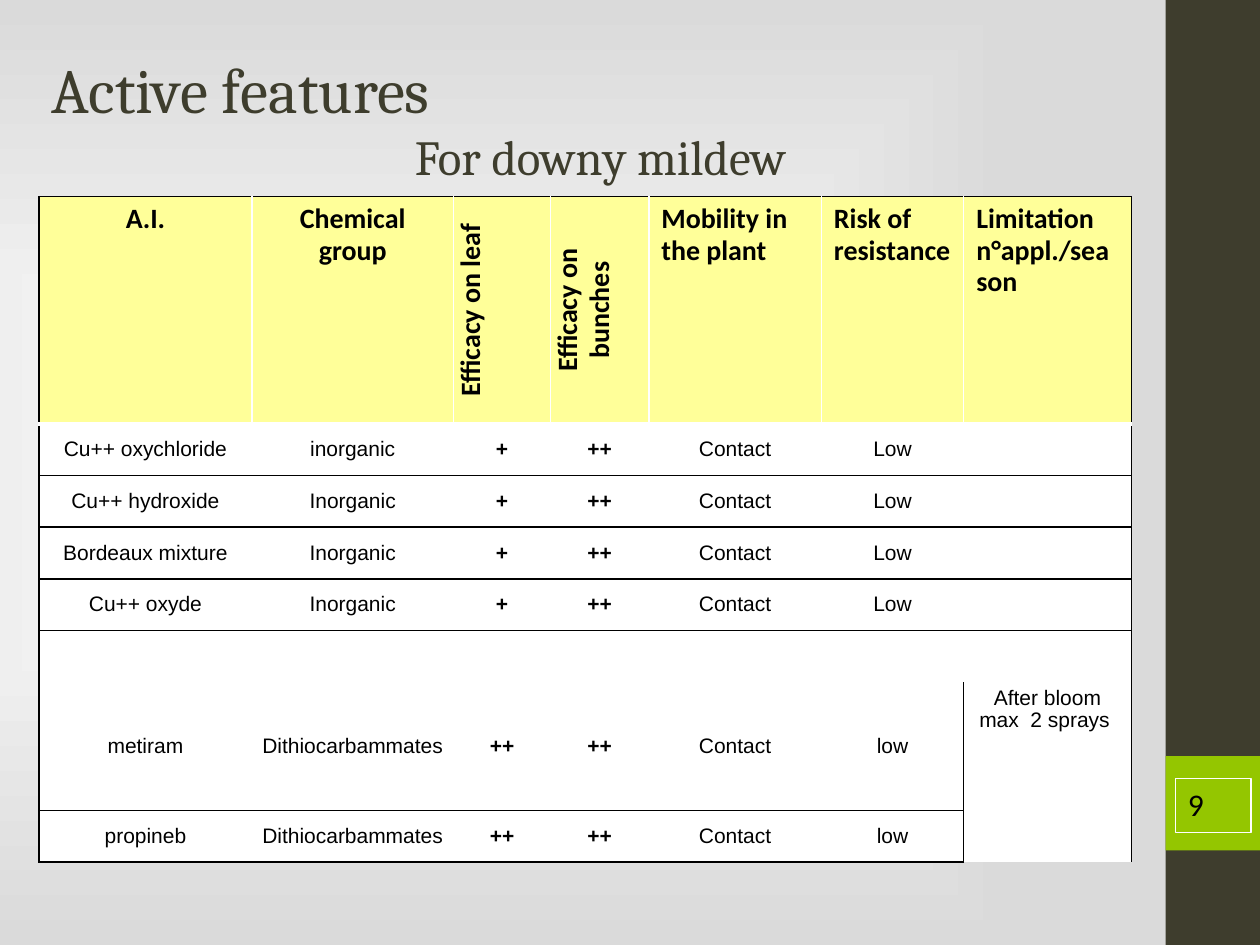
from dataclasses import dataclass
from typing import Optional

from lxml.etree import SubElement
from pptx import Presentation
from pptx.dml.color import RGBColor
from pptx.enum.shapes import MSO_SHAPE as SHAPE
from pptx.enum.text import MSO_ANCHOR as ANCHOR, PP_ALIGN as ALIGN
from pptx.oxml import parse_xml
from pptx.oxml.ns import nsdecls, qn
from pptx.util import Inches, Pt

SLIDE_W, SLIDE_H = Inches(10), Inches(7.5)
BLACK = RGBColor(0x00, 0x00, 0x00)
WHITE = RGBColor(0xFF, 0xFF, 0xFF)
GREY = RGBColor(0xDA, 0xDA, 0xDA)
OLIVE = RGBColor(0x3E, 0x3D, 0x2D)
GREEN = RGBColor(0x94, 0xC6, 0x00)
YELLOW = RGBColor(0xFF, 0xFF, 0x99)


@dataclass(frozen=True)
class Box:
    """Position and size in percent of the slide."""
    x: float
    y: float
    w: float
    h: float

    def emu(self) -> tuple:
        return (int(SLIDE_W * self.x / 100), int(SLIDE_H * self.y / 100),
                int(SLIDE_W * self.w / 100), int(SLIDE_H * self.h / 100))


@dataclass(frozen=True)
class Line:
    color: RGBColor
    width: float = 1


@dataclass(frozen=True)
class Column:
    header: str
    width: float
    align: ALIGN = ALIGN.CENTER
    upright: bool = False
    bold: bool = False


RAIL = Box(92.5, 0, 7.5, 100)
TAB = Box(92.5, 80, 7.5, 10)
NUMBER = Box(93.3, 82.4, 6, 5.73)
TITLE = Box(3.1, 4.13, 89.1, 16.67)
TABLE = Box(3.1, 20.8, 86.7, 61.6)

COLUMNS = [
    Column("A.I.", 1.69),
    Column("Chemical group", 1.6),
    Column("Efficacy on leaf", 0.77, upright=True, bold=True),
    Column("Efficacy on bunches", 0.78, upright=True, bold=True),
    Column("Mobility in the plant", 1.37, ALIGN.LEFT),
    Column("Risk of resistance", 1.13, ALIGN.LEFT),
    Column("Limitation n°appl./season", 1.33, ALIGN.LEFT),
]
ROWS = [
    ["Cu++ oxychloride", "inorganic", "+", "++", "Contact", "Low", ""],
    ["Cu++ hydroxide", "Inorganic", "+", "++", "Contact", "Low", ""],
    ["Bordeaux mixture", "Inorganic", "+", "++", "Contact", "Low", ""],
    ["Cu++ oxyde", "Inorganic", "+", "++", "Contact", "Low", ""],
    [""] * 7,
    ["metiram", "Dithiocarbammates", "++", "++", "Contact", "low",
     "After bloom max  2 sprays "],
    ["propineb", "Dithiocarbammates", "++", "++", "Contact", "low", ""],
]
HEIGHTS = [1.17, 0.41, 0.41, 0.41, 0.41, 0.41, 1.02, 0.41]
LAST_ROW, LAST_COL = len(ROWS), len(COLUMNS) - 1
BLANK_ROW, NOTE_ROW = 5, 6

HEADER_FONT = {"name": "Calibri", "size": Pt(16), "bold": True}
BODY_FONT = {"name": "Arial", "size": Pt(12), "bold": False}
TIGHT = {"margin_left": Inches(0.01), "margin_right": Inches(0.01),
         "margin_top": Inches(0.01), "margin_bottom": 0,
         "vertical_anchor": ANCHOR.MIDDLE}


def apply(target, values: dict) -> None:
    for name, value in values.items():
        setattr(target, name, value)


def add_text(p, text: str, color: RGBColor, font: dict) -> None:
    r = p.add_run()
    r.text = text
    apply(r.font, font)
    r.font.color.rgb = color


def add_box(slide, box: Box, fill: Optional[RGBColor] = None):
    sp = slide.shapes.add_shape(SHAPE.RECTANGLE, *box.emu())
    sp.shadow.inherit = False
    sp.line.fill.background()
    if fill is None:
        sp.fill.background()
    else:
        sp.fill.solid()
        sp.fill.fore_color.rgb = fill
    return sp


def paint_background(slide) -> None:
    """White to grey, spreading in rectangles from the left centre."""
    stops = "".join(f'<a:gs pos="{pos}"><a:srgbClr val="{color}"/></a:gs>'
                    for pos, color in ((0, WHITE), (100000, GREY)))
    slide.background.fill.solid()
    bg_pr = slide.background._cSld.bg.bgPr
    bg_pr.replace(bg_pr[0], parse_xml(
        f'<a:gradFill {nsdecls("a")} rotWithShape="1"><a:gsLst>{stops}</a:gsLst>'
        '<a:path path="shape"><a:fillToRect l="30000" t="50000" r="70000" '
        'b="50000"/></a:path></a:gradFill>'))


def add_title(slide) -> None:
    tf = slide.shapes.add_textbox(*TITLE.emu()).text_frame
    tf.word_wrap = True
    tf.vertical_anchor = ANCHOR.MIDDLE
    add_text(tf.paragraphs[0], "Active features", OLIVE,
             {"name": "Cambria", "size": Pt(36)})
    p = tf.add_paragraph()
    p.alignment = ALIGN.CENTER
    add_text(p, "For downy mildew", OLIVE, {"name": "Cambria", "size": Pt(28)})


def vertical_rule(row: int, edge: int) -> Line:
    """Line at a column edge: black outside and beside the spray note."""
    beside_note = edge == LAST_COL and row >= NOTE_ROW
    return Line(BLACK if edge in (0, LAST_COL + 1) or beside_note else WHITE)


def horizontal_rule(edge: int) -> Optional[Line]:
    """Line at a row edge: thick white below the header, none below the gap."""
    if edge == NOTE_ROW:
        return None
    return Line(WHITE, 3) if edge == 1 else Line(BLACK)


def set_borders(cell, row: int, col: int) -> None:
    in_note = col == LAST_COL and row >= NOTE_ROW
    lines = {
        "a:lnL": vertical_rule(row, col),
        "a:lnR": vertical_rule(row, col + 1),
        "a:lnT": None if in_note else horizontal_rule(row),
        "a:lnB": (None if in_note and row != LAST_ROW
                  else horizontal_rule(row + 1)),
    }
    tc_pr = cell._tc.get_or_add_tcPr()
    for tag, line in lines.items():
        ln = SubElement(tc_pr, qn(tag))
        if line is None:
            SubElement(ln, qn("a:noFill"))
            continue
        ln.set("w", str(Pt(line.width)))
        fill = SubElement(ln, qn("a:solidFill"))
        SubElement(fill, qn("a:srgbClr")).set("val", str(line.color))


def fill_cell(cell, row: int, col: int, text: str) -> None:
    column, header = COLUMNS[col], row == 0
    set_borders(cell, row, col)
    cell.fill.solid()
    cell.fill.fore_color.rgb = YELLOW if header else WHITE
    if not text:
        return
    if column.upright if header else col != LAST_COL:
        apply(cell, TIGHT)
    if header and column.upright:
        cell._tc.tcPr.set("vert", "vert270")
    p = cell.text_frame.paragraphs[0]
    apply(p, {"alignment": column.align if header else ALIGN.CENTER,
              "line_spacing": 0.93})
    font = HEADER_FONT if header else {**BODY_FONT, "bold": column.bold}
    add_text(p, text, BLACK, font)


def add_feature_table(slide) -> None:
    table = slide.shapes.add_table(LAST_ROW + 1, LAST_COL + 1,
                                   *TABLE.emu()).table
    table.horz_banding = False
    for grid_col, column in zip(table.columns, COLUMNS):
        grid_col.width = Inches(column.width)
    for grid_row, height in zip(table.rows, HEIGHTS):
        grid_row.height = Inches(height)
    for row, texts in enumerate([[c.header for c in COLUMNS], *ROWS]):
        for col, text in enumerate(texts):
            fill_cell(table.cell(row, col), row, col, text)
    table.cell(NOTE_ROW, LAST_COL).merge(table.cell(LAST_ROW, LAST_COL))


def add_slide_number(slide) -> None:
    sp = add_box(slide, NUMBER)
    sp.line.color.rgb = WHITE
    sp.line.width = Pt(0.75)
    sp.text_frame.vertical_anchor = ANCHOR.TOP
    p = sp.text_frame.paragraphs[0]
    p.alignment = ALIGN.LEFT
    add_text(p, "9", BLACK, {"name": "Calibri", "size": Pt(18)})


def main() -> None:
    prs = Presentation()
    prs.slide_width, prs.slide_height = SLIDE_W, SLIDE_H
    slide = prs.slides.add_slide(prs.slide_layouts[6])
    paint_background(slide)
    add_box(slide, RAIL, OLIVE)
    add_box(slide, TAB, GREEN)
    add_title(slide)
    add_feature_table(slide)
    add_slide_number(slide)
    prs.save("out.pptx")


if __name__ == "__main__":
    main()
